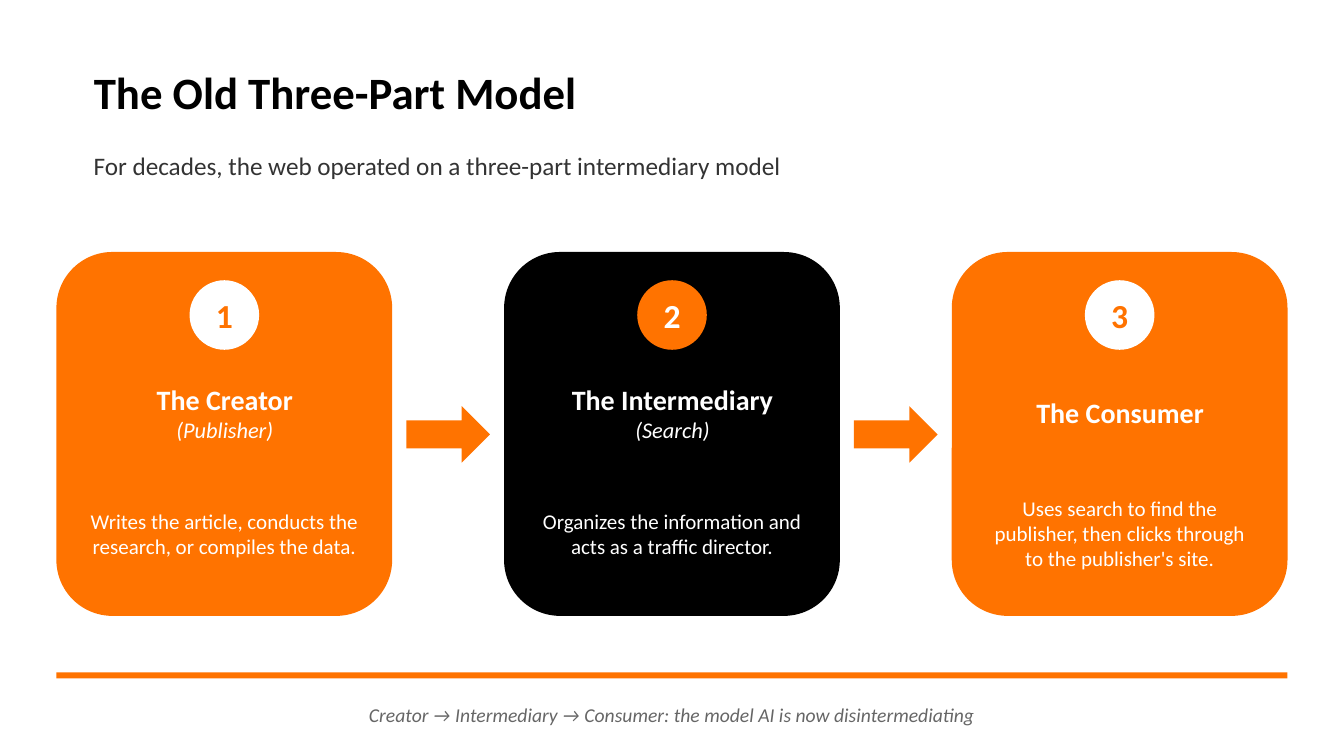
from pptx import Presentation
from pptx.dml.color import RGBColor
from pptx.enum.shapes import MSO_SHAPE as Shape
from pptx.enum.text import MSO_ANCHOR as Anchor, PP_ALIGN as Align
from pptx.util import Inches, Pt

ORANGE, BLACK, WHITE = "FF7300", "000000", "FFFFFF"
LEFT, TOP, WIDE, HIGH, STEP = 0.56, 2.5, 3.33, 3.61, 4.44
FULL = 2 * STEP + WIDE
CARDS = [
    (ORANGE, WHITE, ["The Creator", "(Publisher)"],
     "Writes the article, conducts the research, or compiles the data."),
    (BLACK, ORANGE, ["The Intermediary", "(Search)"],
     "Organizes the information and acts as a traffic director."),
    (ORANGE, WHITE, ["The Consumer"],
     "Uses search to find the publisher, then clicks through to the publisher's site."),
]


def color(code):
    """Turn a hex string into a colour."""
    return RGBColor.from_string(code)


def style(para, size, code, bold=False, italic=False, align=Align.CENTER):
    """Format one paragraph."""
    para.alignment = align
    font = para.font
    font.name, font.size = "Calibri", Pt(size)
    font.bold, font.italic = bold, italic
    font.color.rgb = color(code)


def frame(item):
    """Set the insets, wrapping and anchor of a text frame."""
    text = item.text_frame
    text.word_wrap = True
    text.vertical_anchor = Anchor.MIDDLE
    text.margin_left = text.margin_right = Inches(0.1)
    text.margin_top = text.margin_bottom = Inches(0.1)
    return text


def label(slide, box, lines, *looks, **extra):
    """Add a text box with one look per line."""
    text = frame(slide.shapes.add_textbox(*map(Inches, box)))
    text.text = "\n".join(lines)
    for para, look in zip(text.paragraphs, looks):
        style(para, *look, **extra)


def block(slide, kind, box, fill):
    """Add a plain filled shape."""
    shape = slide.shapes.add_shape(kind, *map(Inches, box))
    shape.shadow.inherit = False
    shape.fill.solid()
    shape.fill.fore_color.rgb = color(fill)
    shape.line.fill.background()
    return shape


def header(slide, left, top, wide):
    """Place the title and the line below it."""
    title = slide.shapes.title
    title.left, title.top = Inches(left), Inches(top)
    title.width, title.height = Inches(wide), Inches(0.69)
    text = frame(title)
    text.text = "The Old Three-Part Model"
    style(text.paragraphs[0], 32, BLACK, True, align=Align.LEFT)
    label(slide, (left, top + 0.83, wide, 0.5),
          ["For decades, the web operated on a three-part intermediary model"],
          (18, "333333"), align=Align.LEFT)


def card(slide, left, top, num, fill, disc, names, note):
    """Draw one numbered card."""
    block(slide, Shape.ROUNDED_RECTANGLE, (left, top, WIDE, HIGH), fill)
    badge = block(slide, Shape.OVAL, (left + 1.32, top + 0.28, 0.69, 0.69), disc)
    text = frame(badge)
    text.text = str(num)
    style(text.paragraphs[0], 24, ORANGE if disc == WHITE else WHITE, True)
    label(slide, (left + 0.14, top + 1.18, 3.06, 0.83), names,
          (20, WHITE, True), (16, WHITE, False, True))
    label(slide, (left + 0.22, top + 2.18, 2.89, 1.22), [note], (15, WHITE))


def flow(slide, left, top):
    """Draw the row of cards and the arrows between them."""
    for i, parts in enumerate(CARDS):
        card(slide, left + i * STEP, top, i + 1, *parts)
    for i in range(len(CARDS) - 1):
        start = left + i * STEP + WIDE + 0.14
        block(slide, Shape.RIGHT_ARROW, (start, top + 1.53, 0.83, 0.56), ORANGE)


def footer(slide, left, top, wide):
    """Draw the closing rule and its caption."""
    block(slide, Shape.RECTANGLE, (left, top, wide, 0.06), ORANGE)
    label(slide, (left, top + 0.21, wide, 0.42),
          ["Creator → Intermediary → Consumer: the model AI is now disintermediating"],
          (14, "666666", False, True))


def main():
    """Build and save the slide."""
    deck = Presentation()
    deck.slide_width, deck.slide_height = Inches(13.33), Inches(7.5)
    slide = deck.slides.add_slide(deck.slide_layouts[5])
    slide.background.fill.solid()
    slide.background.fill.fore_color.rgb = color(WHITE)
    header(slide, 0.83, 0.56, 11.67)
    flow(slide, LEFT, TOP)
    footer(slide, LEFT, 6.67, FULL)
    deck.save("out.pptx")


if __name__ == "__main__":
    main()
